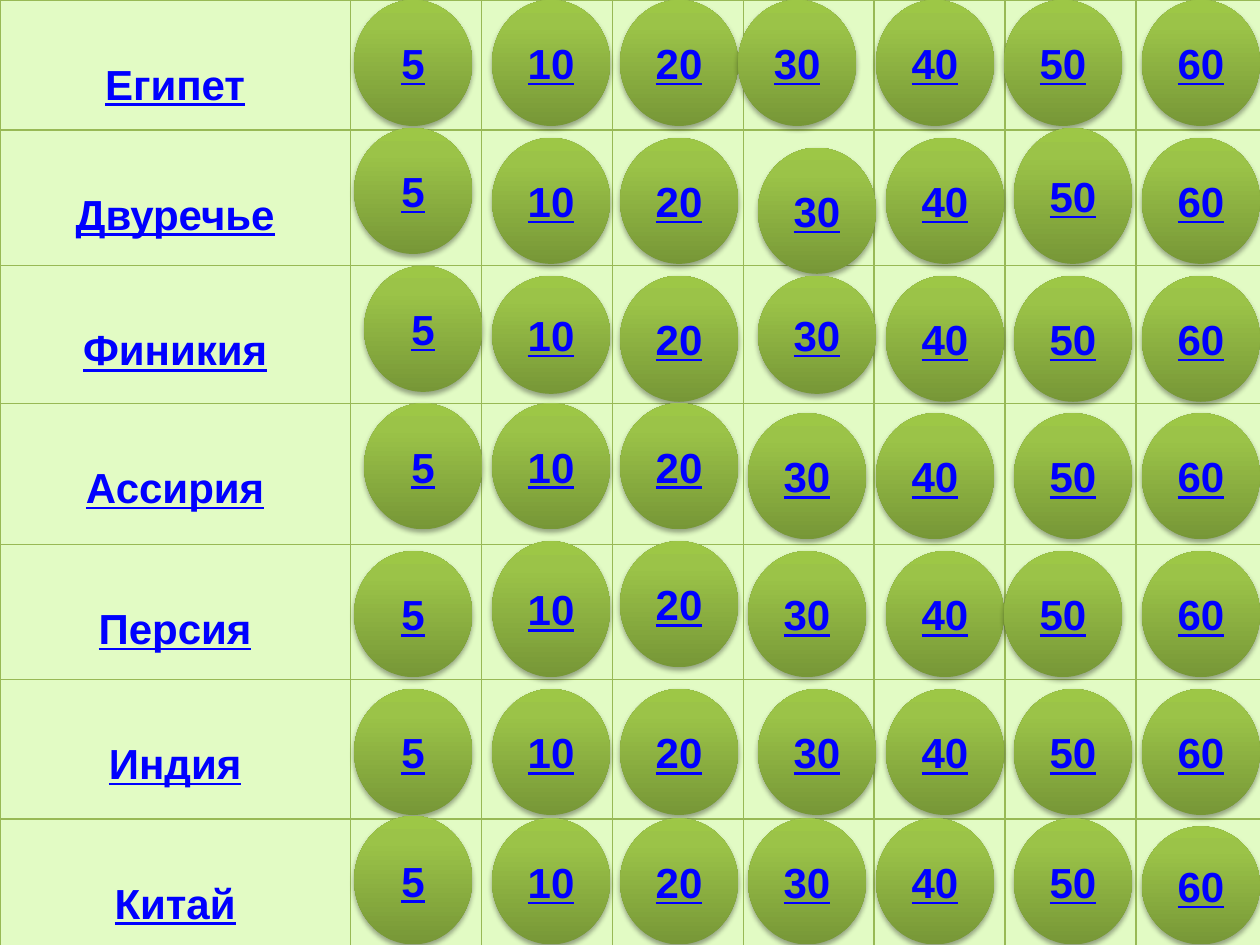
from lxml.etree import fromstring
from pptx import Presentation
from pptx.dml.color import RGBColor
from pptx.enum.shapes import MSO_SHAPE
from pptx.enum.text import MSO_ANCHOR, PP_ALIGN
from pptx.oxml.ns import nsdecls
from pptx.util import Cm, Pt

COLORS = {
    "cell": "E2FBC4",
    "border": "98B955",
    "text": "0000FF",
    "bottom": "779737",
    "middle": "9BC348",
    "top": "9DC746",
    "shadow": "000000",
}
TOPICS = ["Египет", "Двуречье", "Финикия", "Ассирия", "Персия", "Индия", "Китай"]
POINTS = [5, 10, 20, 30, 40, 50, 60]
COLUMN_WIDTHS = [7.06] + [2.64] * 6 + [2.54]
ROW_HEIGHTS = [2.62, 2.74, 2.77, 2.84, 2.72, 2.82, 2.62]
BUTTON_LEFTS = [7.14, 9.92, 12.5, 15.08, 17.86, 20.44, 23.02]
BUTTON_TOPS = [0, 2.78, 5.56, 8.33, 11.11, 13.89, 16.5]
BUTTON_WIDTH, BUTTON_HEIGHT = 2.38, 2.54

# (row, column): shift right, shift down, extra height
ADJUSTMENTS = {
    (0, 3): (-0.2, 0, 0), (0, 4): (-0.2, 0, 0), (0, 5): (-0.2, 0, 0),
    (1, 0): (0, -0.2, 0), (1, 3): (0.2, 0.2, 0), (1, 5): (0, -0.2, 0.2),
    (2, 0): (0.2, -0.2, 0), (2, 1): (0, 0, -0.16), (2, 3): (0.2, 0, -0.16),
    (3, 0): (0.2, -0.2, 0), (3, 1): (0, -0.2, 0), (3, 2): (0, -0.2, 0),
    (3, 4): (-0.2, 0, 0),
    (4, 1): (0, -0.2, 0.2), (4, 2): (0, -0.2, 0), (4, 5): (-0.2, 0, 0),
    (5, 3): (0.2, 0, 0),
    (6, 0): (0, -0.05, 0.05), (6, 4): (-0.2, 0, 0), (6, 6): (0, 0.16, -0.16),
}

GRADIENT = f"""<a:gradFill {nsdecls("a")} rotWithShape="1"><a:gsLst>
<a:gs pos="0"><a:srgbClr val="{COLORS['bottom']}"/></a:gs>
<a:gs pos="80000"><a:srgbClr val="{COLORS['middle']}"/></a:gs>
<a:gs pos="100000"><a:srgbClr val="{COLORS['top']}"/></a:gs>
</a:gsLst><a:lin ang="16200000" scaled="0"/></a:gradFill>"""
SHADOW = f"""<a:effectLst {nsdecls("a")}>
<a:outerShdw blurRad="{Pt(3.1)}" dist="{Pt(1.8)}" dir="5400000" rotWithShape="0">
<a:srgbClr val="{COLORS['shadow']}"><a:alpha val="35000"/></a:srgbClr>
</a:outerShdw></a:effectLst>"""


def write_text(text_frame, text):
    paragraph = text_frame.paragraphs[0]
    paragraph.text = text
    paragraph.alignment = PP_ALIGN.CENTER
    font = paragraph.font
    font.name = "Arial"
    font.size = Pt(24)
    font.bold = True
    font.underline = True
    font.color.rgb = RGBColor.from_string(COLORS["text"])
    return paragraph


def add_borders(cell):
    properties = cell._tc.get_or_add_tcPr()
    for index, side in enumerate(["lnL", "lnR", "lnT", "lnB"]):
        border = fromstring(
            f'<a:{side} {nsdecls("a")} w="{Pt(0.75)}"><a:solidFill>'
            f'<a:srgbClr val="{COLORS["border"]}"/></a:solidFill></a:{side}>'
        )
        properties.insert(index, border)


presentation = Presentation()
presentation.slide_width = Cm(25.4)
presentation.slide_height = Cm(19.05)
slide = presentation.slides.add_slide(presentation.slide_layouts[6])

table = slide.shapes.add_table(
    len(TOPICS), len(COLUMN_WIDTHS), Cm(0), Cm(0),
    Cm(sum(COLUMN_WIDTHS)), Cm(sum(ROW_HEIGHTS)),
).table
table.first_row = False
table.horz_banding = False
for column, width in zip(table.columns, COLUMN_WIDTHS):
    column.width = Cm(width)
for row, height in zip(table.rows, ROW_HEIGHTS):
    row.height = Cm(height)
for cell in table.iter_cells():
    cell.fill.solid()
    cell.fill.fore_color.rgb = RGBColor.from_string(COLORS["cell"])
    cell.margin_left = cell.margin_right = Cm(0.18)
    cell.margin_top = cell.margin_bottom = Cm(0)
    add_borders(cell)
for row_index, topic in enumerate(TOPICS):
    cell = table.cell(row_index, 0)
    cell.margin_top = Cm(1.11)
    paragraph = write_text(cell.text_frame, topic)
    paragraph.line_spacing = 1.15

for row_index, top in enumerate(BUTTON_TOPS):
    for column_index, left in enumerate(BUTTON_LEFTS):
        right_shift, down_shift, extra_height = ADJUSTMENTS.get(
            (row_index, column_index), (0, 0, 0)
        )
        button = slide.shapes.add_shape(
            MSO_SHAPE.OVAL, Cm(left + right_shift), Cm(top + down_shift),
            Cm(BUTTON_WIDTH), Cm(BUTTON_HEIGHT + extra_height),
        )
        button.line.fill.background()
        outline = button.line._get_or_add_ln()
        outline.addprevious(fromstring(GRADIENT))
        outline.addnext(fromstring(SHADOW))
        button.text_frame.vertical_anchor = MSO_ANCHOR.MIDDLE
        write_text(button.text_frame, str(POINTS[column_index]))

presentation.save("out.pptx")
